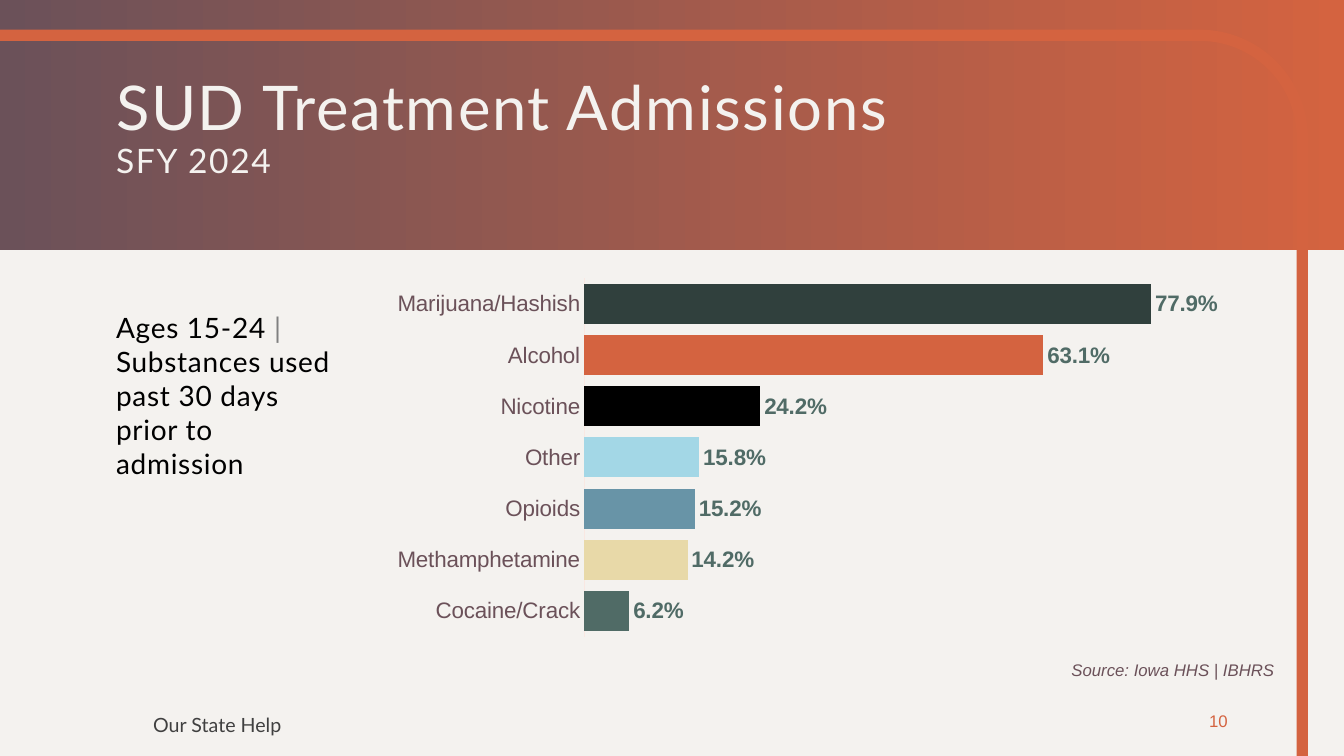
import collections

import lxml.etree
import pptx
import pptx.chart.data
import pptx.dml.color
import pptx.enum.chart
import pptx.enum.shapes
import pptx.enum.text
import pptx.oxml
import pptx.oxml.ns
import pptx.util

Cm = pptx.util.Cm
Pt = pptx.util.Pt
RGBColor = pptx.dml.color.RGBColor
Align = pptx.enum.text.PP_ALIGN
Anchor = pptx.enum.text.MSO_ANCHOR
Box = collections.namedtuple("Box", "left top width height")

CREAM = RGBColor(0xF4, 0xF2, 0xEF)
PLUM = RGBColor(0x6B, 0x51, 0x59)
ORANGE = RGBColor(0xD4, 0x63, 0x40)
BLUSH = RGBColor(0xF9, 0xE8, 0xE2)
CHARCOAL = RGBColor(0x40, 0x40, 0x40)
GRAY = RGBColor(0x80, 0x80, 0x80)
BLACK = RGBColor(0x00, 0x00, 0x00)
SAGE = RGBColor(0x50, 0x6B, 0x66)
SAND = RGBColor(0xE8, 0xD9, 0xA8)
STEEL = RGBColor(0x68, 0x94, 0xA7)
SKY = RGBColor(0xA3, 0xD7, 0xE6)
PINE = RGBColor(0x30, 0x40, 0x3D)

SUBSTANCES = [
    ("Cocaine/Crack", 0.062, SAGE),
    ("Methamphetamine", 0.142, SAND),
    ("Opioids", 0.152, STEEL),
    ("Other", 0.158, SKY),
    ("Nicotine", 0.242, BLACK),
    ("Alcohol", 0.631, ORANGE),
    ("Marijuana/Hashish", 0.779, PINE),
]


def add_span(para, text, *, size, color, name="Lato", italic=False, spacing=0):
    """Add a run; spacing is the letter spacing in points."""
    span = para.add_run()
    span.text = text
    style_font(span.font, size, color, name)
    span.font.italic = italic
    if spacing:
        span.font._element.set("spc", str(round(spacing * 100)))


def style_font(font, size, color, name="Arial", bold=False):
    font.size = Pt(size)
    font.name = name
    font.bold = bold
    font.color.rgb = color


def add_label(slide, box, text, align=Align.LEFT, anchor=Anchor.TOP, wrap=True, **text_format):
    frame = slide.shapes.add_textbox(*box).text_frame
    frame.word_wrap = wrap
    frame.vertical_anchor = anchor
    para = frame.paragraphs[0]
    para.alignment = align
    add_span(para, text, **text_format)


def open_placeholder(slide, index, box, anchor):
    """Move a placeholder into the box, in front, and return its first paragraph."""
    holder = slide.placeholders[index]
    holder.left, holder.top, holder.width, holder.height = box
    slide.shapes.element.append(holder.element)
    frame = holder.text_frame
    frame.word_wrap = True
    frame.auto_size = pptx.enum.text.MSO_AUTO_SIZE.NONE
    frame.vertical_anchor = anchor
    para = frame.paragraphs[0]
    para.alignment = Align.LEFT
    para.space_before = Pt(0)
    return para


def draw_header(slide, box):
    shape_types = pptx.enum.shapes.MSO_SHAPE
    band = slide.shapes.add_shape(shape_types.RECTANGLE, *box)
    band.shadow.inherit = False
    band.line.fill.background()
    band.fill.gradient()
    band.fill.gradient_angle = 0
    for stop, color in zip(band.fill.gradient_stops, (PLUM, ORANGE)):
        stop.color.rgb = color

    border = slide.shapes.add_shape(
        shape_types.ROUNDED_RECTANGLE,
        box.left - Cm(3.25), box.top + Cm(0.89), Cm(36.07), Cm(22.1))
    border.adjustments[0] = 0.117
    border.shadow.inherit = False
    border.fill.background()
    border.line.color.rgb = ORANGE
    border.line.width = Pt(8)

    title_box = Box(box.left + Cm(2.67), box.top + Cm(0.89), Cm(29.36), Cm(4.72))
    para = open_placeholder(slide, 0, title_box, Anchor.MIDDLE)
    para.line_spacing = 0.9
    add_span(para, "SUD Treatment Admissions", size=44, color=CREAM, spacing=1.2)
    para.add_line_break()
    add_span(para, "SFY 2024", size=24, color=CREAM, spacing=1.2)


def draw_summary(slide, box):
    para = open_placeholder(slide, 1, box, Anchor.TOP)
    properties = para._p.get_or_add_pPr()
    properties.set("marL", "0")
    properties.set("indent", "0")
    para.line_spacing = 1.01
    para.space_after = Pt(7)
    lxml.etree.SubElement(properties, pptx.oxml.ns.qn("a:buNone"))
    for text, color in (
        ("Ages 15-24 ", BLACK),
        ("|", GRAY),
        (" Substances used past 30 days prior to admission", BLACK),
    ):
        add_span(para, text, size=20, color=color, spacing=0.5)


def fix_plot_area(chart, **fractions):
    """Pin the inner plot area to fractions (x, y, w, h) of the chart."""
    plot_area = chart._chartSpace.chart.plotArea
    for layout in plot_area.findall(pptx.oxml.ns.qn("c:layout")):
        plot_area.remove(layout)
    settings = {"layoutTarget": "inner", "xMode": "edge", "yMode": "edge", **fractions}
    body = "".join(f'<c:{key} val="{value}"/>' for key, value in settings.items())
    plot_area.insert(0, pptx.oxml.parse_xml(
        f'<c:layout {pptx.oxml.ns.nsdecls("c")}>'
        f"<c:manualLayout>{body}</c:manualLayout></c:layout>"))


def draw_substance_chart(slide, box):
    names, shares, colors = zip(*SUBSTANCES)
    chart_data = pptx.chart.data.CategoryChartData(number_format="0.0%")
    chart_data.categories = names
    chart_data.add_series("Series 1", shares)
    chart = slide.shapes.add_chart(
        pptx.enum.chart.XL_CHART_TYPE.BAR_CLUSTERED, *box, chart_data).chart
    chart.has_title = False
    chart.has_legend = False
    style_font(chart.font, 16, ORANGE)
    fix_plot_area(chart, x=0.233, y=0.02, w=0.748, h=0.96)

    categories = chart.category_axis
    categories.major_tick_mark = pptx.enum.chart.XL_TICK_MARK.NONE
    categories.format.line.color.rgb = BLUSH
    categories.format.line.width = Pt(0.75)
    style_font(categories.tick_labels.font, 16, PLUM)

    values = chart.value_axis
    values.minimum_scale = 0
    values.maximum_scale = 0.9
    values.has_major_gridlines = False
    values.visible = False

    plot = chart.plots[0]
    plot.gap_width = 28
    plot.vary_by_categories = False
    series = plot.series[0]
    for index, color in enumerate(colors):
        fill = series.points[index].format.fill
        fill.solid()
        fill.fore_color.rgb = color

    labels = series.data_labels
    labels.show_value = True
    labels.number_format = "0.0%"
    labels.number_format_is_linked = False
    labels.position = pptx.enum.chart.XL_LABEL_POSITION.OUTSIDE_END
    style_font(labels.font, 16, SAGE, bold=True)


def draw_footer(slide, box):
    add_label(slide, Box(box.left, box.top + Cm(1.32), Cm(8.99), Cm(1.02)),
              "Our State Help", size=14, color=CHARCOAL)
    right = box.left + box.width
    add_label(slide, Box(right - Cm(5.79), box.top, Cm(5.79), Cm(0.76)),
              "Source: Iowa HHS | IBHRS", wrap=False,
              size=12, color=PLUM, name="Arial", italic=True)
    add_label(slide, Box(right - Cm(3.94), box.top + Cm(1.14), Cm(2.59), Cm(1.02)),
              "10", align=Align.RIGHT, anchor=Anchor.MIDDLE,
              size=12, color=ORANGE, name="Arial")


def main():
    deck = pptx.Presentation()
    deck.slide_width, deck.slide_height = Cm(33.87), Cm(19.05)
    page = deck.slides.add_slide(deck.slide_layouts[1])
    page.background.fill.solid()
    page.background.fill.fore_color.rgb = CREAM

    draw_header(page, Box(Cm(0), Cm(0), deck.slide_width, Cm(6.3)))
    draw_summary(page, Box(Cm(2.67), Cm(7.7), Cm(6.22), Cm(7.65)))
    draw_substance_chart(page, Box(Cm(9.58), Cm(6.83), Cm(22.07), Cm(9.4)))
    draw_footer(page, Box(Cm(3.61), Cm(16.51), Cm(28.93), Cm(2.34)))
    deck.save("out.pptx")


if __name__ == "__main__":
    main()
